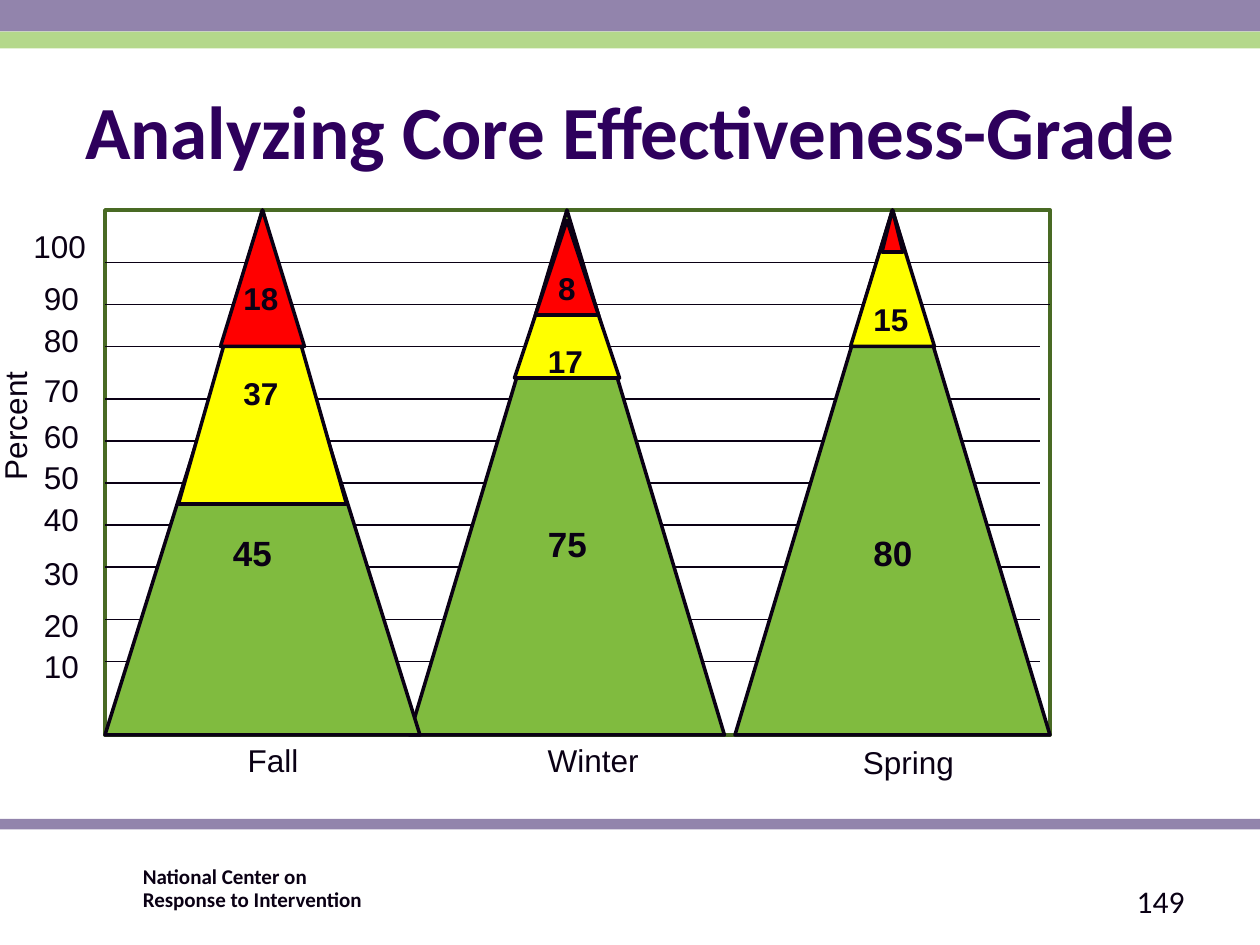
from dataclasses import dataclass

import pptx
import pptx.dml.color
import pptx.enum.shapes
import pptx.enum.text
import pptx.oxml.ns
import pptx.util
from lxml import etree

PX = 914400 // 120
ALIGN = pptx.enum.text.PP_ALIGN
ANCHOR = pptx.enum.text.MSO_ANCHOR
SHAPE = pptx.enum.shapes.MSO_SHAPE


@dataclass(frozen=True)
class Theme:
    ink: str = "0A0014"
    title: str = "2E005C"
    purple: str = "9284AC"
    lime: str = "B4D88B"
    frame: str = "496A24"
    core: str = "80BB3F"
    strategic: str = "FFFF00"
    intensive: str = "FF0000"
    body_font: str = "Arial"
    head_font: str = "Calibri"
    title_size: float = 42.9
    core_size: int = 20
    label_size: int = 18
    footer_size: int = 12
    outline: int = 2
    grid: float = 0.75


T = Theme()

SEASONS = [
    {"name": "Winter", "center": 440, "label": (380, 500, 170), "align": ALIGN.CENTER,
     "tiers": [(T.core, 0, 300, 500), (T.strategic, 10, 100, 150), (T.intensive, 10, 60, 90)],
     "values": [("75", -30, 292, 70), ("17", -30, 120, 60), ("8", -30, 50, 60)]},
    {"name": "Spring", "center": 750, "label": (710, 502, 140), "align": ALIGN.LEFT,
     "tiers": [(T.core, 0, 300, 500), (T.strategic, 0, 80, 130), (T.intensive, 0, 20, 40)],
     "values": [("80", -30, 300, 70), ("15", -30, 80, 70)]},
    {"name": "Fall", "center": 150, "label": (80, 500, 160), "align": ALIGN.CENTER,
     "tiers": [(T.core, 20, 300, 480), (T.strategic, 0, 160, 280), (T.intensive, 0, 80, 130)],
     "values": [("45", -40, 300, 100), ("37", -30, 150, 60), ("18", -30, 60, 60)]},
]
GRID_TOPS = [50, 90, 130, 180, 220, 260, 300, 340, 390, 430]
AXIS_TOPS = [10, 60, 100, 147, 191, 230, 270, 322, 371, 410]


def emu(*lengths):
    return [n * PX for n in lengths]


def rgb(color):
    return pptx.dml.color.RGBColor.from_string(color)


def style_text(tf, size, font, color=T.ink, bold=False, align=ALIGN.LEFT):
    for p in tf.paragraphs:
        p.alignment = align
        for r in p.runs:
            r.font.size = pptx.util.Pt(size)
            r.font.name = font
            r.font.bold = bold
            r.font.color.rgb = rgb(color)


def add_text(s, box, text, size=T.label_size, font=T.body_font, **style):
    sp = s.shapes.add_textbox(*emu(*box))
    tf = sp.text_frame
    tf.word_wrap = True
    tf.text = text
    style_text(tf, size, font, **style)
    return sp


def add_block(s, kind, box, fill=None, line=None):
    sp = s.shapes.add_shape(kind, *emu(*box))
    sp.shadow.inherit = False
    if fill:
        sp.fill.solid()
        sp.fill.fore_color.rgb = rgb(fill)
    else:
        sp.fill.background()
    if line:
        sp.line.color.rgb = rgb(line)
        sp.line.width = pptx.util.Pt(T.outline)
    else:
        sp.line.fill.background()
    return sp


def add_gridline(s, x, y, width):
    line = s.shapes.add_connector(
        pptx.enum.shapes.MSO_CONNECTOR.STRAIGHT, *emu(x, y, x + width, y))
    line.line.color.rgb = rgb(T.ink)
    line.line.width = pptx.util.Pt(T.grid)
    etree.SubElement(line._element.spPr, pptx.oxml.ns.qn("a:effectLst"))


def add_header(s, box):
    x, y, w, h = box
    add_block(s, SHAPE.RECTANGLE, (x, y, w, 30), T.purple)
    add_block(s, SHAPE.RECTANGLE, (x, y + 30, w, 16), T.lime)
    title = s.shapes.title
    title.left, title.top, title.width, title.height = emu(x + 60, y + 60, w - 120, h - 60)
    tf = title.text_frame
    tf.text = "Analyzing Core Effectiveness-Grade"
    tf.word_wrap = True
    tf.auto_size = pptx.enum.text.MSO_AUTO_SIZE.NONE
    tf.vertical_anchor = ANCHOR.MIDDLE
    style_text(tf, T.title_size, T.head_font, T.title, True, ALIGN.CENTER)


def add_footer(s, box):
    x, y, w, h = box
    add_block(s, SHAPE.RECTANGLE, (x, y, w, 10), T.purple)
    center = add_text(s, (x + 131, y + 40, 389, 36),
                      "National Center on\vResponse to Intervention",
                      T.footer_size, T.head_font, bold=True)
    tf = center.text_frame
    tf.margin_left = tf.margin_right = tf.margin_top = tf.margin_bottom = 5 * PX
    tf.paragraphs[0].line_spacing = 0.9
    number = add_text(s, (x + w - 340, y + 54, 280, 48), "149",
                      font=T.head_font, align=ALIGN.RIGHT)
    number.text_frame.vertical_anchor = ANCHOR.MIDDLE


def add_axis(s, box):
    x, y, w, h = box
    add_block(s, SHAPE.RECTANGLE, box, line=T.frame)
    for i, (grid_top, label_top) in enumerate(zip(GRID_TOPS, AXIS_TOPS)):
        add_gridline(s, x, y + grid_top, w if i < 2 else w - 10)
        left = x - 80 if i == 0 else x - 70
        add_text(s, (left, y + label_top, 80, 48), str(100 - 10 * i))
    add_text(s, (x - 171, y + 160, 170, 48), "Percent").rotation = 270


def add_season(s, box, season):
    x, y, w, h = box
    center = x + season["center"]
    for color, top, width, height in season["tiers"]:
        add_block(s, SHAPE.ISOSCELES_TRIANGLE,
                  (center - width // 2, y + top, width, height), color, T.ink)
    for i, (value, dx, top, width) in enumerate(season["values"]):
        size, height = (T.core_size, 53) if i == 0 else (T.label_size, 48)
        align = ALIGN.CENTER if len(value) == 1 else ALIGN.LEFT
        add_text(s, (center + dx, y + top, width, height), value, size,
                 bold=True, align=align)
    dx, dy, width = season["label"]
    add_text(s, (x + dx, y + dy, width, 48), season["name"], align=season["align"])


def main():
    prs = pptx.Presentation()
    prs.slide_width, prs.slide_height = emu(1200, 900)
    s = prs.slides.add_slide(prs.slide_layouts[5])
    plot = (100, 200, 900, 500)
    add_header(s, (0, 0, 1200, 186))
    add_footer(s, (0, 780, 1200, 120))
    add_axis(s, plot)
    for season in SEASONS:
        add_season(s, plot, season)
    prs.save("out.pptx")


if __name__ == "__main__":
    main()
